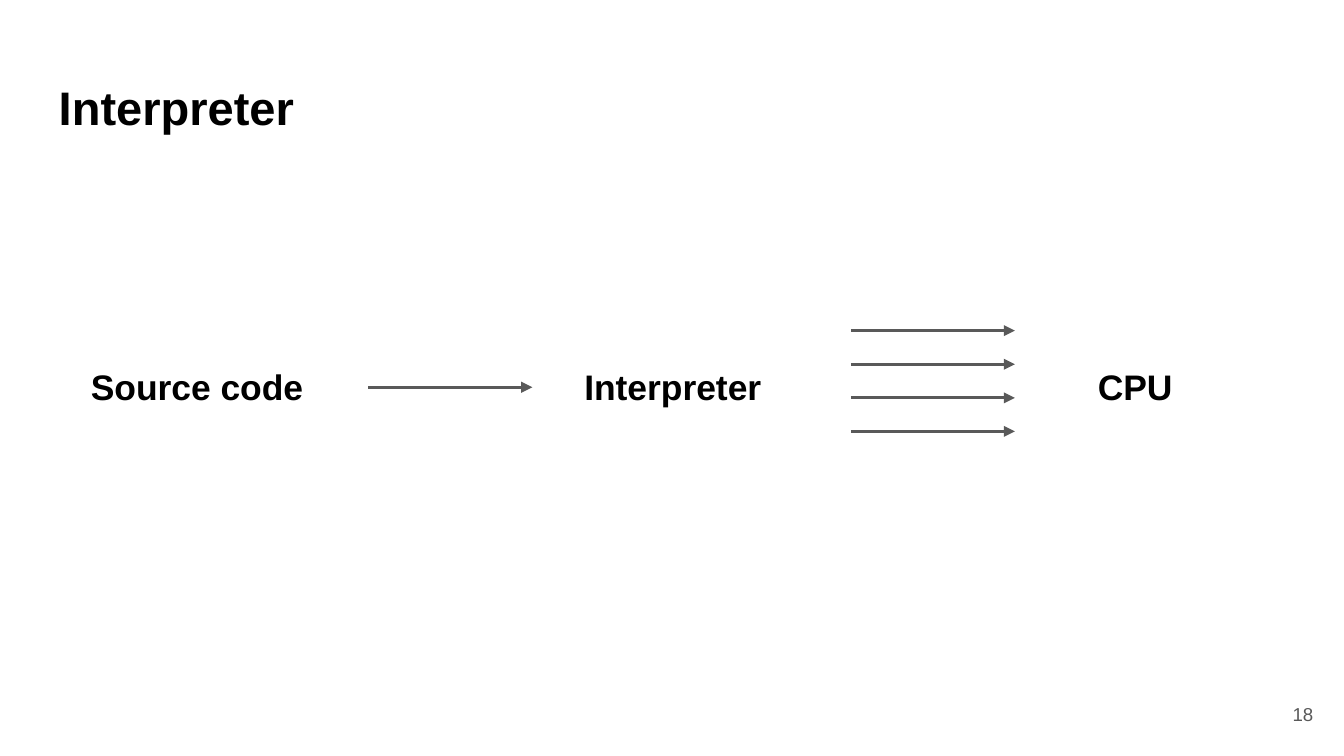
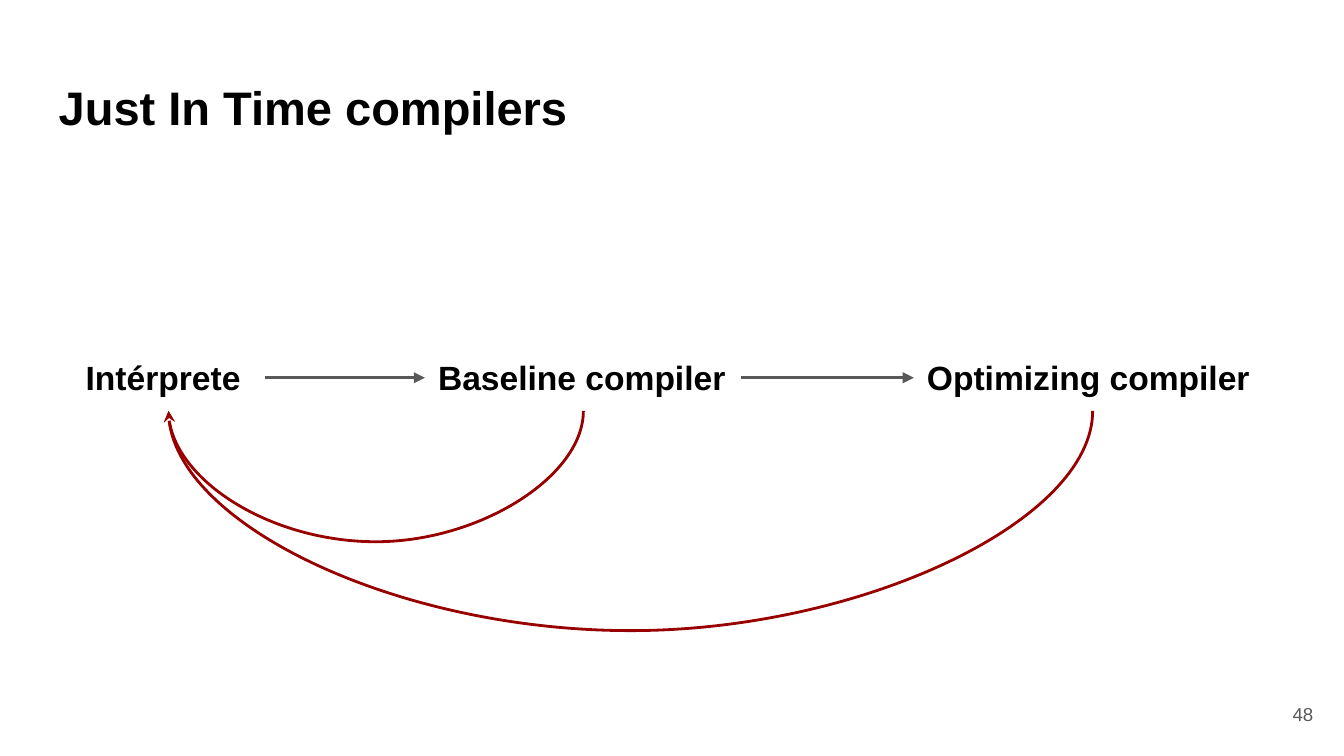
"""Build two slides on how interpreters and JIT compilers run code."""
from lxml.etree import SubElement
from pptx import Presentation
from pptx.dml.color import RGBColor
from pptx.enum.shapes import MSO_CONNECTOR
from pptx.enum.text import MSO_ANCHOR, MSO_AUTO_SIZE, PP_ALIGN
from pptx.oxml.ns import qn
from pptx.util import Cm, Emu, Pt

FONT, BLACK, GREY, RED = "Arial", "000000", "595959", "980000"
INSET = Cm(0.25)
CURVE_WIDTH = Emu(600)
BOTTOM_SITE = 2

SLIDES = [
    {
        "title": "Interpreter", "number": "18",
        "top": 6.65, "height": 1.32, "size": 19, "align": PP_ALIGN.CENTER,
        "stages": [("Source code", 0.36, 6.73), ("Interpreter", 9.35, 6.73),
                   ("CPU", 19.18, 4.55)],
        "arrows": [(6.96, 10.06, 7.32)]
        + [(16.08, 19.18, 6.25 + 0.635 * i) for i in range(4)],
        "returns": [],
    },
    {
        "title": "Just In Time compilers", "number": "48",
        "top": 6.5, "height": 1.27, "size": 18, "align": PP_ALIGN.LEFT,
        "stages": [("Intérprete", 1.37, 3.63), ("Baseline compiler", 8.03, 5.99),
                   ("Optimizing compiler", 17.27, 6.76)],
        "arrows": [(5, 8.03, 7.14), (14.01, 17.27, 7.14)],
        "returns": [(1, 0, 2.06), (2, 0, 3.46)],
    },
]


def rgb(color):
    return RGBColor.from_string(color)


def place(sp, left, top, width, height):
    sp.left, sp.top, sp.width, sp.height = left, top, width, height


def write(sp, text, size, color=BLACK, bold=True, align=PP_ALIGN.LEFT,
          anchor=MSO_ANCHOR.TOP, fit=MSO_AUTO_SIZE.NONE):
    tf = sp.text_frame
    tf.text = text
    tf.word_wrap, tf.auto_size, tf.vertical_anchor = True, fit, anchor
    tf.margin_left = tf.margin_right = tf.margin_top = tf.margin_bottom = INSET
    p = tf.paragraphs[0]
    p.alignment = align
    p.font.name, p.font.size, p.font.bold = FONT, Pt(size), bold
    p.font.color.rgb = rgb(color)


def add_text(s, box, text, size, **style):
    sp = s.shapes.add_textbox(*map(Cm, box))
    write(sp, text, size, **style)
    return sp


def style_line(c, color, head):
    c.line.color.rgb = rgb(color)
    c.line.width = Pt(1.5)
    SubElement(c.line._get_or_add_ln(), qn("a:tailEnd"), type=head)
    SubElement(c._element.spPr, qn("a:effectLst"))


def add_arrow(s, x1, x2, y):
    c = s.shapes.add_connector(MSO_CONNECTOR.STRAIGHT, Cm(x1), Cm(y), Cm(x2), Cm(y))
    style_line(c, GREY, "triangle")


def add_return(s, start, end, depth):
    """Draw a curve that hangs depth below two boxes, from start back to end."""
    c = s.shapes.add_connector(MSO_CONNECTOR.CURVE, 0, 0, 0, 0)
    c.begin_connect(start, BOTTOM_SITE)
    c.end_connect(end, BOTTOM_SITE)
    x1, x2 = (sp.left + sp.width // 2 for sp in (start, end))
    span, y = x1 - x2, start.top + start.height
    xfrm = c._element.spPr.xfrm
    xfrm.flipH = xfrm.flipV = False
    xfrm.rot = 90
    place(c, (x1 + x2 - CURVE_WIDTH) // 2, y - span // 2, CURVE_WIDTH, span)
    guides = c._element.spPr.find(qn("a:prstGeom")).find(qn("a:avLst"))
    bend = round(Cm(depth) / CURVE_WIDTH * 100000)
    SubElement(guides, qn("a:gd"), name="adj1", fmla=f"val {bend}")
    style_line(c, RED, "stealth")


def build_slide(prs, data):
    s = prs.slides.add_slide(prs.slide_layouts[5])
    title = s.shapes.title
    place(title, Cm(0.86), Cm(1.24), Cm(23.67), Cm(1.6))
    write(title, data["title"], 25.2)
    add_text(s, (23.55, 12.95, 1.52, 1.09), data["number"], 10, color=GREY,
             bold=False, align=PP_ALIGN.RIGHT, anchor=MSO_ANCHOR.MIDDLE)
    boxes = [
        add_text(s, (left, data["top"], width, data["height"]), text, data["size"],
                 align=data["align"], fit=MSO_AUTO_SIZE.SHAPE_TO_FIT_TEXT)
        for text, left, width in data["stages"]
    ]
    for arrow in data["arrows"]:
        add_arrow(s, *arrow)
    for start, end, depth in data["returns"]:
        add_return(s, boxes[start], boxes[end], depth)


def main():
    prs = Presentation()
    prs.slide_width, prs.slide_height = Cm(25.4), Cm(14.29)
    for data in SLIDES:
        build_slide(prs, data)
    prs.save("out.pptx")


if __name__ == "__main__":
    main()
